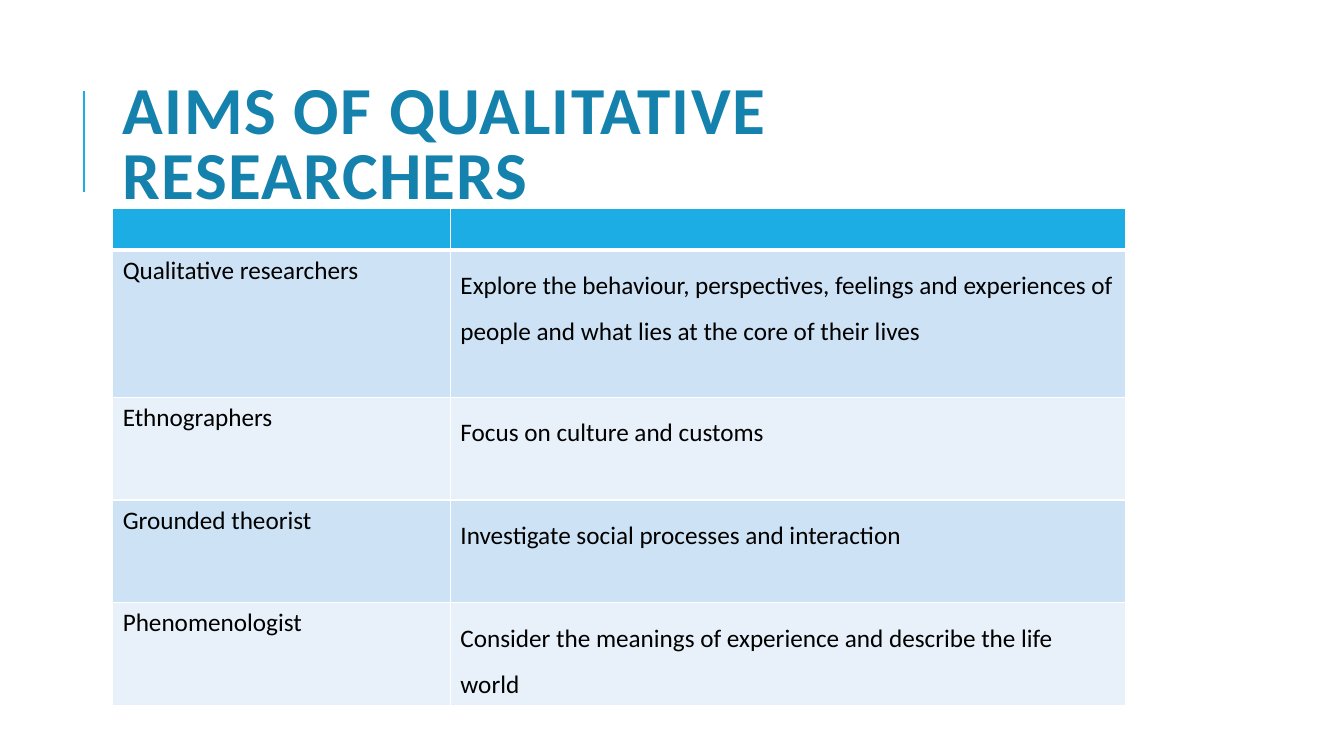
from lxml.etree import SubElement
from pptx import Presentation
from pptx.dml.color import RGBColor
from pptx.enum.shapes import MSO_CONNECTOR as Connector
from pptx.enum.text import MSO_ANCHOR as Anchor, MSO_AUTO_SIZE as AutoSize, PP_ALIGN as Align
from pptx.oxml.ns import qn
from pptx.util import Cm, Pt

FONT = "Calibri"
ACCENT = "1CADE4"
BANDS = ["CDE3F5", "E8F1FA"]
COLUMN_WIDTHS = [8.51, 17.02]
ROW_HEIGHTS = [1.04, 3.71, 2.59, 2.59, 2.59]
AIMS = [
    ("Qualitative researchers",
     "Explore the behaviour, perspectives, feelings and experiences of "
     "people and what lies at the core of their lives"),
    ("Ethnographers", "Focus on culture and customs"),
    ("Grounded theorist", "Investigate social processes and interaction"),
    ("Phenomenologist",
     "Consider the meanings of experience and describe the life world"),
]


def color(value):
    return RGBColor.from_string(value)


def style_text(para, size, value, spacing, bold=False):
    para.alignment = Align.LEFT
    para.line_spacing = spacing
    for span in para.runs:
        font = span.font
        font.name, font.size, font.bold = FONT, Pt(size), bold
        font.color.rgb = color(value)


def place_title(slide, text):
    title = slide.shapes.title
    title.left, title.top = Cm(2.84), Cm(1.63)
    title.width, title.height = Cm(27), Cm(4.17)
    frame = title.text_frame
    frame.text = text
    frame.word_wrap = True
    frame.auto_size = AutoSize.NONE
    frame.vertical_anchor = Anchor.MIDDLE
    para = frame.paragraphs[0]
    style_text(para, 48, "1482AC", 0.8, bold=True)
    para.runs[0].font._element.set("spc", "100")


def add_title_rule(slide):
    rule = slide.shapes.add_connector(
        Connector.STRAIGHT, Cm(2.11), Cm(4.83), Cm(2.11), Cm(2.29))
    rule.line.color.rgb = color(ACCENT)
    rule.line.width = Pt(1.5)
    SubElement(rule._element.spPr, qn("a:effectLst"))


def set_borders(cell, widths):
    properties = cell._tc.get_or_add_tcPr()
    for side, width in widths.items():
        border = SubElement(properties, qn(f"a:ln{side}"), w=str(Pt(width)))
        fill = SubElement(border, qn("a:solidFill"))
        SubElement(fill, qn("a:srgbClr"), val="FFFFFF")


def fill_cell(cell, text, background, spacing, widths):
    set_borders(cell, widths)
    cell.fill.solid()
    cell.fill.fore_color.rgb = color(background)
    cell.text_frame.text = text
    style_text(cell.text_frame.paragraphs[0], 18, "000000", spacing)


def add_aims_table(slide):
    table = slide.shapes.add_table(
        len(ROW_HEIGHTS), len(COLUMN_WIDTHS), Cm(2.84), Cm(5.26),
        Cm(sum(COLUMN_WIDTHS)), Cm(sum(ROW_HEIGHTS))).table
    for column, width in zip(table.columns, COLUMN_WIDTHS):
        column.width = Cm(width)
    for row, height in zip(table.rows, ROW_HEIGHTS):
        row.height = Cm(height)
    for row_index, texts in enumerate([("", "")] + AIMS):
        background = BANDS[(row_index - 1) % 2] if row_index else ACCENT
        widths = {"L": 1, "R": 1, "T": 3 if row_index == 1 else 1,
                  "B": 1 if row_index else 3}
        for column_index, text in enumerate(texts):
            spacing = 1.5 if row_index and column_index else 1.0
            fill_cell(table.cell(row_index, column_index), text,
                      background, spacing, widths)


def main():
    deck = Presentation()
    deck.slide_width, deck.slide_height = Cm(33.87), Cm(19.05)
    slide = deck.slides.add_slide(deck.slide_layouts[5])
    add_title_rule(slide)
    place_title(slide, "AIMS OF QUALITATIVE RESEARCHERS")
    add_aims_table(slide)
    deck.save("out.pptx")


if __name__ == "__main__":
    main()
